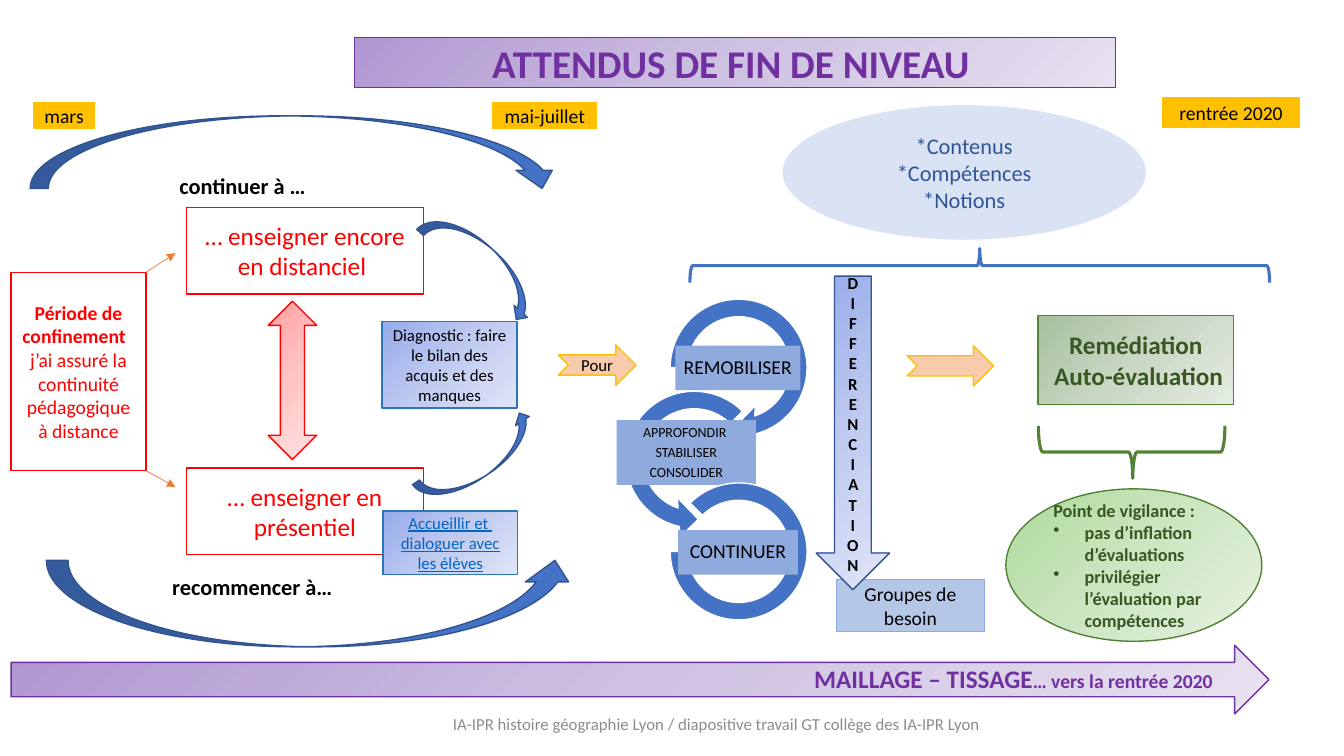
"""Build the slide on end-of-level expectations, from school closure to the 2020 return."""
from copy import deepcopy
from dataclasses import dataclass

from lxml import etree
from pptx import Presentation
from pptx.dml.color import RGBColor
from pptx.enum import shapes, text
from pptx.oxml.ns import qn
from pptx.util import Cm, Pt


@dataclass(frozen=True)
class Theme:
    font: str = "Calibri"
    black: str = "000000"
    white: str = "FFFFFF"
    red: str = "FF0000"
    purple: str = "7030A0"
    green: str = "548235"
    dark_green: str = "385723"
    blue: str = "4472C4"
    blue_edge: str = "325491"
    box_edge: str = "2E75B6"
    label_blue: str = "8FAADC"
    group_blue: str = "B4C7E7"
    pale_blue: str = "DAE3F3"
    deep_blue: str = "2F5597"
    link: str = "0563C1"
    gold: str = "FFC000"
    peach: str = "F8CBAD"
    orange: str = "ED7D31"
    grey: str = "8C8C8C"
    purple_fade: tuple = ("B197D2", "CEC1E2", "E7E1F0")
    sage_fade: tuple = ("A7C09D", "C9D7C4", "E5EBE2")
    green_fade: tuple = ("AEDA9B", "CDE6C2", "E6F2E1")
    blue_fade: tuple = ("96ABEA", "C0CBF0", "E0E5F7")
    red_fade: tuple = ("FFA0A0", "FFC5C5", "FFE3E3")
    title: int = 28
    large: int = 18
    medium: int = 16
    body: int = 14
    vigilance: int = 13
    small: int = 12
    tiny: int = 10


theme = Theme()
kinds = shapes.MSO_SHAPE
presentation = Presentation()
presentation.slide_width, presentation.slide_height = Cm(33.87), Cm(19.05)
slide = presentation.slides.add_slide(presentation.slide_layouts[6])


def draw(kind, frame, fill=None, line=None, weight=1, rotation=0, adjustments=()):
    """Add a preset shape; a tuple of colours makes a diagonal gradient."""
    shape = slide.shapes.add_shape(kind, *map(Cm, frame))
    shape.shadow.inherit = False
    shape.rotation = rotation
    for index, value in enumerate(adjustments):
        shape.adjustments[index] = value
    if isinstance(fill, tuple):
        shape.fill.gradient()
        shape.fill.gradient_angle = 315
        stop_list = shape._element.spPr.find(".//" + qn("a:gsLst"))
        stop_list.insert(1, deepcopy(stop_list[0]))
        for index, stop in enumerate(shape.fill.gradient_stops):
            stop.position = index / 2
            stop.color.rgb = RGBColor.from_string(fill[index])
    elif fill:
        shape.fill.solid()
        shape.fill.fore_color.rgb = RGBColor.from_string(fill)
    else:
        shape.fill.background()
    if line:
        shape.line.color.rgb = RGBColor.from_string(line)
        shape.line.width = Pt(weight)
    else:
        shape.line.fill.background()
    return shape


def write(shape, lines, size, color=theme.black, bold=False,
          align=text.PP_ALIGN.CENTER, anchor=text.MSO_ANCHOR.MIDDLE):
    """Fill a shape with one paragraph per line and return the paragraphs."""
    frame = shape.text_frame
    frame.word_wrap = True
    frame.vertical_anchor = anchor
    frame.text = "\n".join(lines)
    for paragraph in frame.paragraphs:
        paragraph.alignment = align
        paragraph.font.name = theme.font
        paragraph.font.size = Pt(size)
        paragraph.font.bold = bold
        paragraph.font.color.rgb = RGBColor.from_string(color)
    return frame.paragraphs


for top, teaching in ((5.23, "… enseigner encore en distanciel "),
                      (11.79, "… enseigner en présentiel")):
    box = draw(kinds.RECTANGLE, (4.7, top, 5.97, 2.18), theme.white, theme.red)
    write(box, [teaching], theme.large, theme.red)

cycle_steps = (
    (kinds.CIRCULAR_ARROW, (16.61, 7.26, 4.01, 4.01), (0.11, 11.42, 45, 108, 0.125),
     (17.02, 8.71, 3.15, 1.12), ["REMOBILISER"], theme.body),
    (kinds.LEFT_CIRCULAR_ARROW, (15.49, 9.58, 4.01, 4.01), (0.11, 11.42, 63, 189, 0.125),
     (15.54, 10.59, 3.51, 1.63), ["APPROFONDIR ", "STABILISER", "CONSOLIDER"], theme.tiny),
    (kinds.BLOCK_ARC, (16.89, 12.17, 3.45, 3.45), (135, 108, 0.127),
     (17.09, 13.36, 3.02, 1.12), ["CONTINUER"], theme.body),
)
for kind, ring_frame, adjustments, label_frame, lines, size in cycle_steps:
    draw(kind, ring_frame, theme.blue, theme.white, adjustments=adjustments)
    label = draw(kinds.RECTANGLE, label_frame, theme.label_blue)
    frame = label.text_frame
    frame.margin_left = frame.margin_right = frame.margin_top = frame.margin_bottom = Cm(0.03)
    for paragraph in write(label, lines, size):
        paragraph.line_spacing = 0.9
        paragraph.space_after = Pt(size * 0.35)

remediation = draw(kinds.RECTANGLE, (26.16, 7.95, 4.93, 2.24), theme.sage_fade, theme.green)
write(remediation, ["Remédiation", " Auto-évaluation "], theme.large, theme.dark_green, True)

title = draw(kinds.RECTANGLE, (8.94, 0.94, 19.18, 1.27), theme.purple_fade, theme.purple)
write(title, ["ATTENDUS DE FIN DE NIVEAU "], theme.title, theme.purple, True)

draw(kinds.RIGHT_ARROW, (0.28, 16.26, 31.7, 1.73), theme.purple_fade, theme.purple)

closure = draw(kinds.RECTANGLE, (0.28, 6.86, 3.4, 5), theme.white, theme.red)
closure_lines = write(closure, ["Période de confinement  ",
                                "j’ai assuré la continuité pédagogique à distance"],
                      theme.body, theme.red)
closure_lines[0].font.bold = True

for kind, frame, rotation in (
    (kinds.CURVED_DOWN_ARROW, (10.34, 6.2, 3.61, 0.91), 42.1),
    (kinds.CURVED_UP_ARROW, (10.34, 11.18, 3.45, 0.84), 326.2),
    (kinds.CURVED_DOWN_ARROW, (0.76, 2.92, 13.36, 1.83), 0),
    (kinds.CURVED_UP_ARROW, (1.17, 14.12, 13.36, 2.18), 0),
):
    draw(kind, frame, theme.blue, theme.blue_edge, rotation=rotation)

for frame, color, rotation, middle in (
    ((27.86, 9.04, 1.32, 4.7), theme.green, 270, 0.506),
    ((24.26, -0.61, 0.86, 14.61), theme.blue, 90, 0.5),
):
    draw(kinds.LEFT_BRACE, frame, None, color, 2.25, rotation, (0.083, middle))

for start, end in ((6.86, 6.38), (11.86, 12.27)):
    arrow = slide.shapes.add_connector(shapes.MSO_CONNECTOR.STRAIGHT,
                                       Cm(3.68), Cm(start), Cm(4.42), Cm(end))
    arrow.line.color.rgb = RGBColor.from_string(theme.orange)
    arrow.line.width = Pt(0.5)
    etree.SubElement(arrow.line._get_or_add_ln(), qn("a:tailEnd"), type="triangle")
    etree.SubElement(arrow._element.spPr, qn("a:effectLst"))

draw(kinds.NOTCHED_RIGHT_ARROW, (22.86, 8.71, 2.18, 1.02), theme.peach, theme.gold)
purpose = draw(kinds.NOTCHED_RIGHT_ARROW, (14.07, 8.69, 1.96, 1.02), theme.peach, theme.gold)
write(purpose, ["Pour"], theme.small)

for frame, caption in (((4.27, 4.22, 4.45, 0.51), "continuer à …"),
                       ((4.09, 14.33, 4.85, 0.76), "recommencer à…")):
    write(slide.shapes.add_textbox(*map(Cm, frame)), [caption], theme.medium, bold=True,
          align=text.PP_ALIGN.LEFT, anchor=text.MSO_ANCHOR.TOP)

for frame, date in (((0.84, 2.59, 1.55, 0.64), "mars"),
                    ((12.42, 2.59, 2.62, 0.64), "mai-juillet"),
                    ((29.31, 2.46, 3.43, 0.76), "rentrée 2020")):
    write(draw(kinds.RECTANGLE, frame, theme.gold, theme.gold), [date], theme.body)

contents = draw(kinds.OVAL, (19.74, 2.67, 9.12, 3.35), theme.pale_blue, theme.pale_blue)
write(contents, ["*Contenus", "*Compétences", "*Notions"], theme.medium, theme.deep_blue)

draw(kinds.UP_DOWN_ARROW, (6.76, 7.59, 1.22, 3.99), theme.red_fade, theme.red)

vigilance = draw(kinds.OVAL, (25.35, 12.32, 6.45, 3.84), theme.green_fade, theme.green)
vigilance_lines = write(vigilance, ["Point de vigilance :", "pas d’inflation d’évaluations",
                                    "privilégier l’évaluation par compétences"],
                        theme.vigilance, theme.dark_green, True, text.PP_ALIGN.LEFT)
for paragraph in vigilance_lines[1:]:
    properties = paragraph._p.get_or_add_pPr()
    properties.set("marL", str(Cm(0.79)))
    properties.set("indent", str(-Cm(0.79)))
    bullet = etree.Element(qn("a:buChar"), char="•")
    properties.insert(0, bullet)

diagnostic = draw(kinds.RECTANGLE, (9.63, 8.1, 3.4, 2.18), theme.blue_fade, theme.box_edge)
write(diagnostic, ["Diagnostic : faire le bilan des acquis et des manques"], theme.small)

welcome = draw(kinds.RECTANGLE, (9.65, 12.88, 3.4, 1.6), theme.blue_fade, theme.box_edge)
for paragraph in write(welcome, ["Accueillir et ", "dialoguer avec les élèves"],
                       theme.small, theme.link):
    paragraph.font.underline = True

weaving = slide.shapes.add_textbox(Cm(20.27), Cm(16.59), Cm(11.15), Cm(1.02))
weaving_line = write(weaving, ["MAILLAGE – TISSAGE"], theme.large, theme.purple, True,
                     text.PP_ALIGN.LEFT, text.MSO_ANCHOR.TOP)[0]
return_run = weaving_line.add_run()
return_run.text = "… vers la rentrée 2020"
return_run.font.size = Pt(theme.body)

footer = slide.shapes.add_textbox(Cm(9.4), Cm(17.73), Cm(17.32), Cm(1.02))
write(footer, ["IA-IPR histoire géographie Lyon / diapositive travail GT collège des IA-IPR Lyon"],
      theme.small, theme.grey)

groups = draw(kinds.RECTANGLE, (21.08, 14.61, 3.73, 1.3), theme.group_blue, theme.label_blue)
write(groups, ["Groupes de besoin"], theme.body)

differentiation = draw(kinds.DOWN_ARROW, (20.57, 6.96, 1.85, 7.9), theme.blue_fade, theme.blue_edge)
write(differentiation, ["D I", "F", "F", "ERENC", "I", "AT", "I", "ON"], theme.small, bold=True)

presentation.save("out.pptx")
